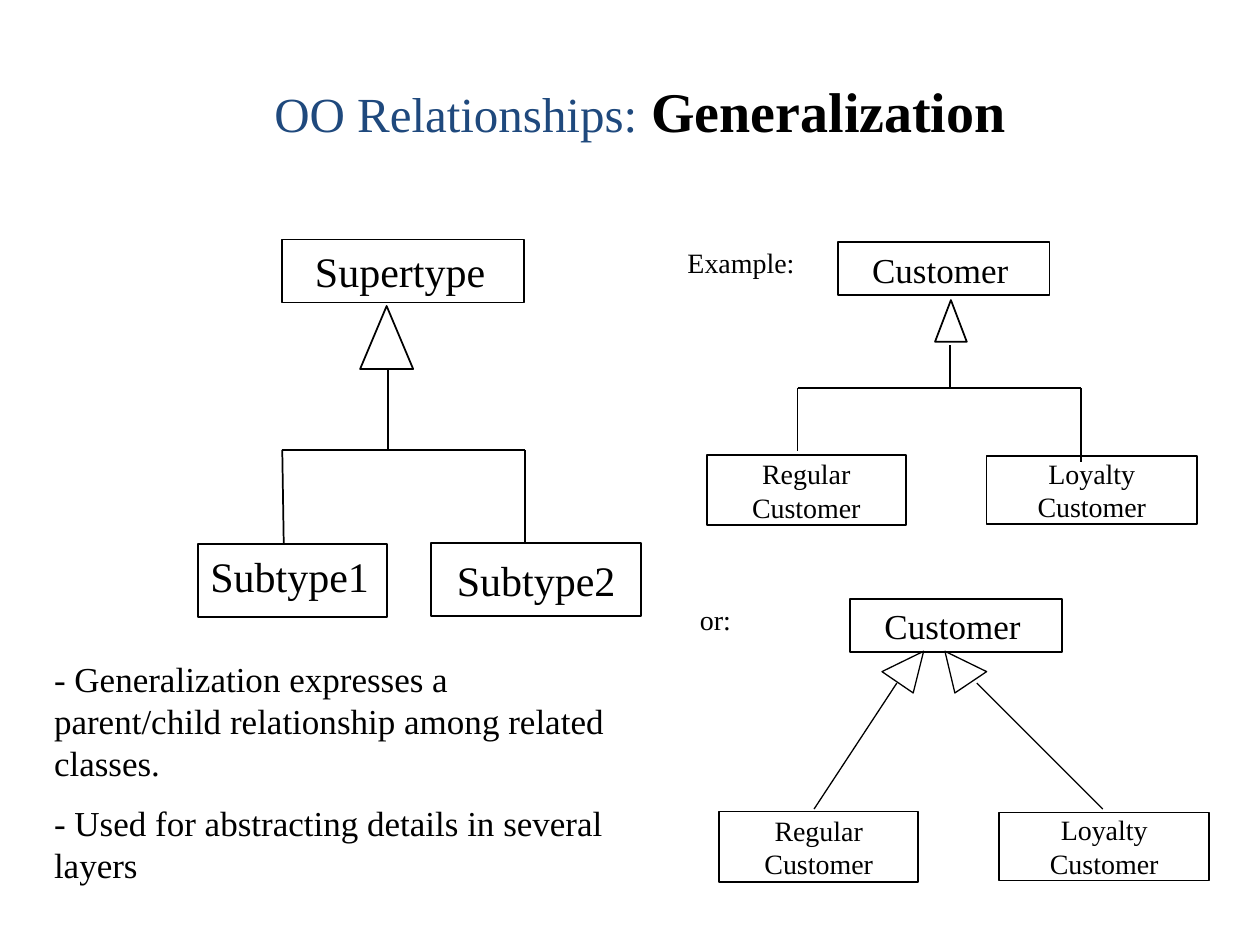
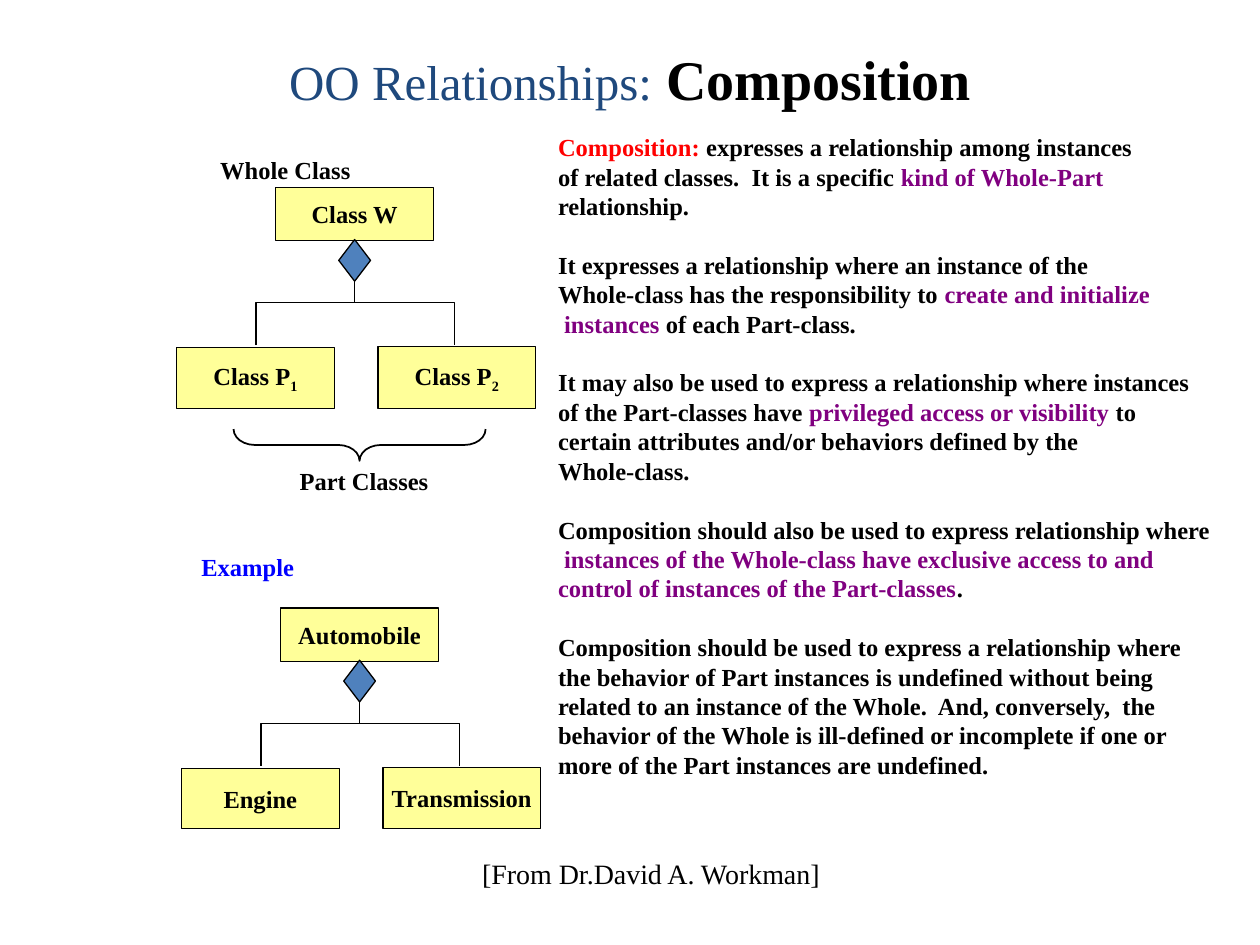
import copy

from pptx import Presentation
from pptx import util as u
from pptx.dml.color import RGBColor
from pptx.enum import shapes, text
from pptx.oxml.ns import qn

BLACK, NAVY, RED = "000000", "1F497D", "FF0000"
PURPLE, BLUE, YELLOW, STEEL = "800080", "0000FF", "FFFF99", "4F81BD"
FONT = "Times New Roman"
CENTER, LEFT = text.PP_ALIGN.CENTER, text.PP_ALIGN.LEFT
TOP, MIDDLE = text.MSO_ANCHOR.TOP, text.MSO_ANCHOR.MIDDLE
KIND = shapes.MSO_SHAPE


def color(value):
    return RGBColor.from_string(value)


def cm(*values):
    return [u.Cm(value) for value in values]


def set_all(target, values):
    for name, value in values.items():
        setattr(target, name, value)


class Deck:
    """Holds the shared style and the page being drawn."""

    def __init__(self):
        self.deck = Presentation()
        self.deck.slide_width, self.deck.slide_height = cm(25.4, 19.05)
        self.page = None

    def add_page(self, topic, area, align, anchor):
        self.page = self.deck.slides.add_slide(self.deck.slide_layouts[5])
        title = self.page.shapes.title
        set_all(title, dict(zip(("left", "top", "width", "height"), cm(*area))))
        spans = [("OO Relationships:", {"size": 28, "ink": NAVY}), (" ", {}),
                 (topic, {"bold": True})]
        self.set_text(title, [spans], size=32, align=align, anchor=anchor)

    def set_text(self, box, paragraphs, size, align=LEFT, anchor=TOP, bold=False,
                 ink=BLACK, gap=0, inset=0.25):
        """Fill a box; a paragraph is a string or a list of (words, format)."""
        frame = box.text_frame
        centered = align == CENTER
        set_all(frame, {"word_wrap": True, "auto_size": text.MSO_AUTO_SIZE.NONE,
                        "vertical_anchor": anchor,
                        "margin_left": u.Cm(0 if centered else inset),
                        "margin_right": u.Cm(0 if centered else 0.25)})
        base = {"size": size, "bold": bold, "ink": ink}
        for index, content in enumerate(paragraphs):
            para = frame.add_paragraph() if index else frame.paragraphs[0]
            set_all(para, {"alignment": align,
                           "space_before": u.Pt(gap if index else 0)})
            spans = [(content, {})] if isinstance(content, str) else content
            for words, style in spans:
                self.add_span(para, words, base | style)

    def add_span(self, para, words, style):
        for index, line in enumerate(words.split("\n")):
            if index:
                para.add_line_break()
            span = para.add_run()
            span.text = line
            set_all(span.font, {"name": FONT, "size": u.Pt(style["size"]),
                                "bold": style["bold"]})
            span.font.color.rgb = color(style["ink"])
            properties = span._r.get_or_add_rPr()
            if "baseline" in style:
                properties.set("baseline", style["baseline"])
            if index:  # the break takes the height of the text around it
                para._p.findall(qn("a:br"))[-1].append(copy.deepcopy(properties))

    def paint(self, shape, fill, width):
        shape.shadow.inherit = False
        if fill:
            shape.fill.solid()
            shape.fill.fore_color.rgb = color(fill)
        else:
            shape.fill.background()
        shape.line.color.rgb = color(BLACK)
        shape.line.width = u.Pt(width)

    def shape(self, kind, area, fill=None, width=1.0):
        shape = self.page.shapes.add_shape(kind, *cm(*area))
        self.paint(shape, fill, width)
        return shape

    def class_box(self, area, paragraphs, size, fill=None, width=1.0, **style):
        box = self.shape(KIND.RECTANGLE, area, fill, width)
        self.set_text(box, paragraphs, size,
                      **({"align": CENTER, "anchor": MIDDLE} | style))

    def label(self, area, paragraphs, size, **style):
        box = self.page.shapes.add_textbox(*cm(*area))
        self.set_text(box, paragraphs, size, **style)

    def line(self, x1, y1, x2, y2, width=0.75):
        line = self.page.shapes.add_connector(
            shapes.MSO_CONNECTOR.STRAIGHT, *cm(x1, y1, x2, y2))
        line.line.color.rgb = color(BLACK)
        line.line.width = u.Pt(width)
        properties = line._element.spPr
        properties.append(properties.makeelement(qn("a:effectLst"), {}))

    def outline(self, points, close):
        start, *rest = [cm(*point) for point in points]
        builder = self.page.shapes.build_freeform(*start)
        builder.add_line_segments(rest, close=close)
        self.paint(builder.convert_to_shape(), None, 0.75)


def customer_boxes(deck, label, dx=0.0, dy=0.0):
    deck.label((13.61 + dx, 4.83 + dy, 3.18, 0.94), [label], 16)
    deck.class_box((16.89 + dx, 4.88 + dy, 4.27, 1.07), ["Customer"], 20,
                   align=LEFT, anchor=TOP, inset=0.69)
    deck.class_box((14.25 + dx, 9.17 + dy, 4.01, 1.42), ["Regular", "Customer"], 16)
    deck.class_box((19.89 + dx, 9.19 + dy, 4.24, 1.37), ["Loyalty", "Customer"], 16)


def generalization(deck):
    deck.add_page("Generalization", (5.28, 1.42, 17.1, 1.6), LEFT, TOP)

    deck.class_box((5.69, 4.83, 4.88, 1.27), ["Supertype"], 24,
                   align=LEFT, anchor=TOP, inset=0.66)
    deck.class_box((3.99, 10.97, 3.81, 1.47), ["Subtype1"], 24,
                   align=LEFT, anchor=TOP)
    deck.class_box((8.69, 10.95, 4.24, 1.47), ["Subtype2"], 24)
    deck.shape(KIND.ISOSCELES_TRIANGLE, (7.26, 6.17, 1.07, 1.27))
    deck.line(7.82, 9.09, 7.82, 7.42)
    for ends in ((5.69, 9.07, 10.59, 9.07), (5.69, 9.07, 5.72, 10.97),
                 (10.59, 9.07, 10.59, 10.97)):
        deck.line(*ends, width=1)
    deck.label((0.84, 13.13, 11.63, 4.9), [
        "- Generalization expresses a parent/child relationship among related classes.",
        "- Used for abstracting details in several layers"], 20, gap=10)

    customer_boxes(deck, "Example:")
    deck.shape(KIND.ISOSCELES_TRIANGLE, (18.85, 6.05, 0.64, 0.84))
    deck.line(19.15, 6.96, 19.15, 7.82, width=1)
    deck.line(16.08, 7.82, 21.79, 7.82, width=1)
    deck.line(16.08, 7.82, 16.08, 9.09)
    deck.line(21.79, 7.82, 21.79, 9.32)

    customer_boxes(deck, "or:", 0.25, 7.19)
    deck.line(16.41, 16.31, 18.08, 13.77)
    deck.line(22.23, 16.31, 19.69, 13.77)
    deck.outline([(17.78, 13.54), (18.41, 13.97), (18.62, 13.13)], close=True)
    deck.outline([(19.05, 13.13), (19.25, 13.97), (19.89, 13.54)], close=True)


def whole_part_tree(deck, whole, parts, dx=0.0, dy=0.0):
    areas = [(5.56, 3.78, 3.18, 1.07), (3.56, 7.01, 3.18, 1.22),
             (7.62, 6.99, 3.18, 1.24)]
    for (left, top, width, height), name in zip(areas, [whole, *parts]):
        deck.class_box((left + dx, top + dy, width, height), [name], 14,
                       YELLOW, 0.75, bold=True)
    bar = [(5.16, 6.96), (5.16, 6.1), (9.17, 6.1), (9.17, 6.96)]
    deck.outline([(x + dx, y + dy) for x, y in bar], close=False)
    deck.line(7.15 + dx, 5.64 + dy, 7.15 + dx, 6.1 + dy)
    deck.shape(KIND.DIAMOND, (6.83 + dx, 4.83 + dy, 0.64, 0.84), STEEL, 0.75)


def composition(deck):
    deck.add_page("Composition", (1.91, 0.84, 21.59, 1.47), CENTER, MIDDLE)

    part_names = [[("Class P", {}), (number, {"baseline": "-25000"})]
                  for number in "12"]
    whole_part_tree(deck, "Class W", part_names)
    whole_part_tree(deck, "Automobile", ["Engine", "Transmission"], 0.1, 8.48)
    brace = deck.shape(KIND.LEFT_BRACE, (6.93, 6.43, 0.64, 5.08))
    brace.rotation = 270
    brace.adjustments[0] = 0.67

    for words, left, top, ink in (("Whole Class", 4.19, 3.0, BLACK),
                                  ("Part Classes", 5.79, 9.27, BLACK),
                                  ("Example", 3.81, 11.0, BLUE)):
        deck.label((left, top, 3.5, 0.84), [words], 14, bold=True, ink=ink)

    purple = {"ink": PURPLE}
    deck.label((11, 2.54, 14.2, 13.26), [
        [("Composition: ", {"ink": RED}),
         ("expresses a relationship among instances\n"
          "of related classes.  It is a specific ", {}),
         ("kind of Whole-Part", purple), ("\nrelationship.", {})],
        [("It expresses a relationship where an instance of the\n"
          "Whole-class has the responsibility to ", {}),
         ("create and initialize\n instances", purple),
         (" of each Part-class.", {})],
        [("It may also be used to express a relationship where instances\n"
          "of the Part-classes have ", {}),
         ("privileged access or visibility", purple),
         (" to\ncertain attributes and/or behaviors defined by the\n"
          "Whole-class.", {})],
        [("Composition should also be used to express relationship where\n ", {}),
         ("instances of the Whole-class have exclusive access to and\n"
          "control of instances of the Part-classes", purple), (".", {})],
        "Composition should be used to express a relationship where\n"
        "the behavior of Part instances is undefined without being\n"
        "related to an instance of the Whole.  And, conversely,  the\n"
        "behavior of the Whole is ill-defined or incomplete if one or\n"
        "more of the Part instances are undefined.",
    ], 14, bold=True, gap=16.8)
    deck.label((9.47, 17.15, 7.47, 0.94), ["[From Dr.David A. Workman]"], 16)


def main():
    deck = Deck()
    generalization(deck)
    composition(deck)
    deck.deck.save("out.pptx")


if __name__ == "__main__":
    main()
